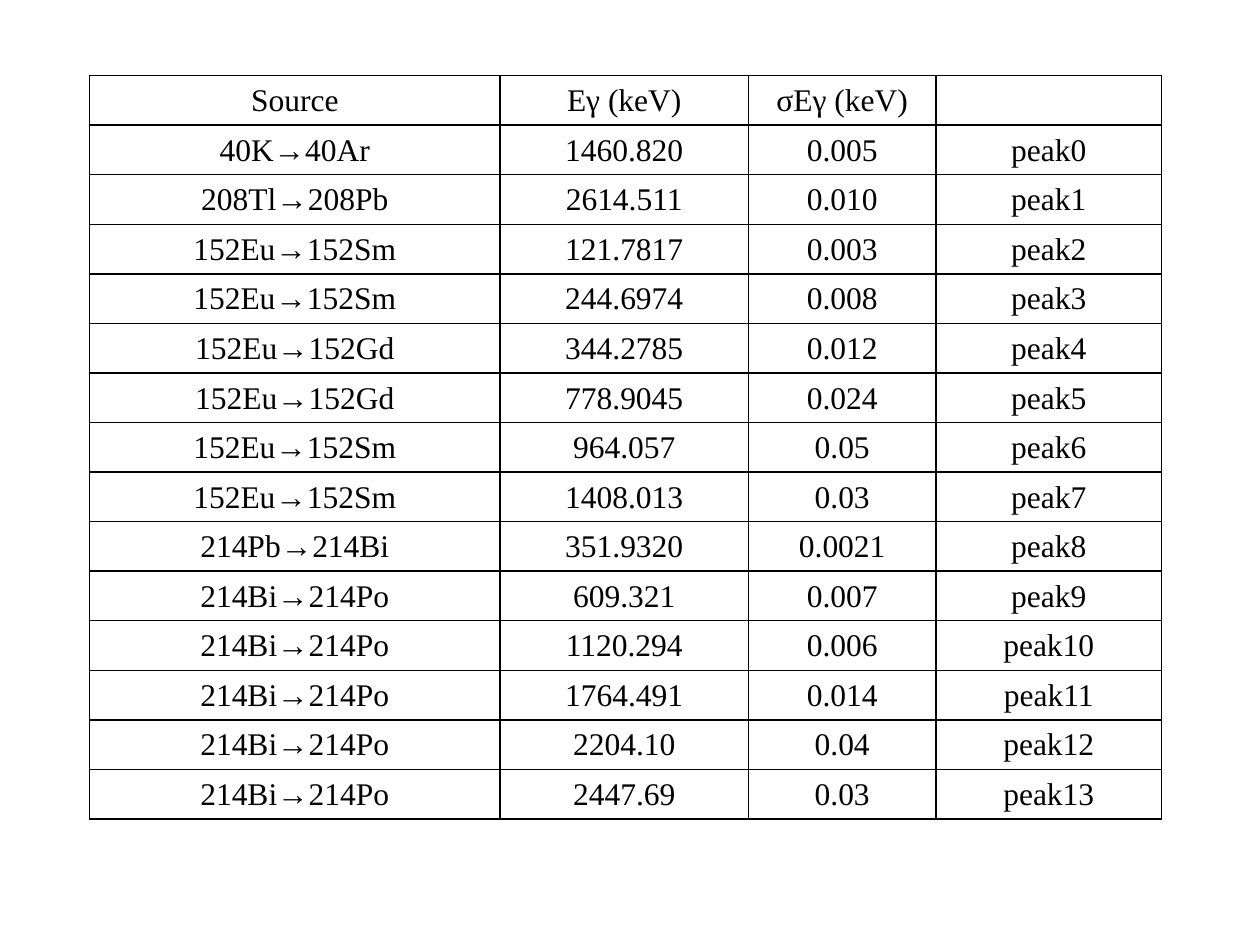
from typing import NamedTuple

from lxml import etree
from pptx import Presentation, util as u
from pptx.dml.color import RGBColor
from pptx.enum import text
from pptx.oxml import ns

BLACK = RGBColor(0x00, 0x00, 0x00)
WHITE = RGBColor(0xFF, 0xFF, 0xFF)
FONT = "Times New Roman"
FONT_SIZE = u.Pt(18)
BORDER_WIDTH = u.Pt(1)
CELL_MARGIN = u.Inches(0.01)
LEFT, TOP, HEIGHT = u.Inches(0.71), u.Inches(0.6), u.Inches(5.9)
COLUMN_WIDTHS = [u.Inches(width) for width in (3.26, 1.97, 1.49, 1.79)]


class GammaLine(NamedTuple):
    decay: str
    energy: str
    sigma: str


HEADINGS = ("Source", "Eγ (keV)", "σEγ (keV)", "")
GAMMA_LINES = [
    GammaLine("40K→40Ar", "1460.820", "0.005"),
    GammaLine("208Tl→208Pb", "2614.511", "0.010"),
    GammaLine("152Eu→152Sm", "121.7817", "0.003"),
    GammaLine("152Eu→152Sm", "244.6974", "0.008"),
    GammaLine("152Eu→152Gd", "344.2785", "0.012"),
    GammaLine("152Eu→152Gd", "778.9045", "0.024"),
    GammaLine("152Eu→152Sm", "964.057", "0.05"),
    GammaLine("152Eu→152Sm", "1408.013", "0.03"),
    GammaLine("214Pb→214Bi", "351.9320", "0.0021"),
    GammaLine("214Bi→214Po", "609.321", "0.007"),
    GammaLine("214Bi→214Po", "1120.294", "0.006"),
    GammaLine("214Bi→214Po", "1764.491", "0.014"),
    GammaLine("214Bi→214Po", "2204.10", "0.04"),
    GammaLine("214Bi→214Po", "2447.69", "0.03"),
]


def add_borders(cell) -> None:
    properties = cell._tc.get_or_add_tcPr()
    for side in ("a:lnL", "a:lnR", "a:lnT", "a:lnB"):
        border = etree.SubElement(properties, ns.qn(side), w=str(BORDER_WIDTH))
        fill = etree.SubElement(border, ns.qn("a:solidFill"))
        etree.SubElement(fill, ns.qn("a:srgbClr"), val=str(BLACK))


def write_cell(cell, wording: str) -> None:
    add_borders(cell)
    cell.fill.solid()
    cell.fill.fore_color.rgb = WHITE
    cell.margin_left = cell.margin_right = cell.margin_top = CELL_MARGIN
    cell.margin_bottom = 0
    cell.vertical_anchor = text.MSO_ANCHOR.MIDDLE
    if not wording:
        return
    paragraph = cell.text_frame.paragraphs[0]
    paragraph.alignment = text.PP_ALIGN.CENTER
    run = paragraph.add_run()
    run.text = wording
    run.font.name = FONT
    run.font.size = FONT_SIZE
    run.font.color.rgb = BLACK


def add_peak_table(slide) -> None:
    rows = [HEADINGS] + [(*line, f"peak{number}") for number, line in enumerate(GAMMA_LINES)]
    peaks = slide.shapes.add_table(
        len(rows), len(HEADINGS), LEFT, TOP, sum(COLUMN_WIDTHS), HEIGHT
    ).table
    peaks.first_row = peaks.horz_banding = False
    for column, width in zip(peaks.columns, COLUMN_WIDTHS):
        column.width = width
    for row, wordings in zip(peaks.rows, rows):
        for cell, wording in zip(row.cells, wordings):
            write_cell(cell, wording)


def main() -> None:
    deck = Presentation()
    deck.slide_width, deck.slide_height = u.Inches(10), u.Inches(7.5)
    add_peak_table(deck.slides.add_slide(deck.slide_layouts[6]))
    deck.save("out.pptx")


if __name__ == "__main__":
    main()
